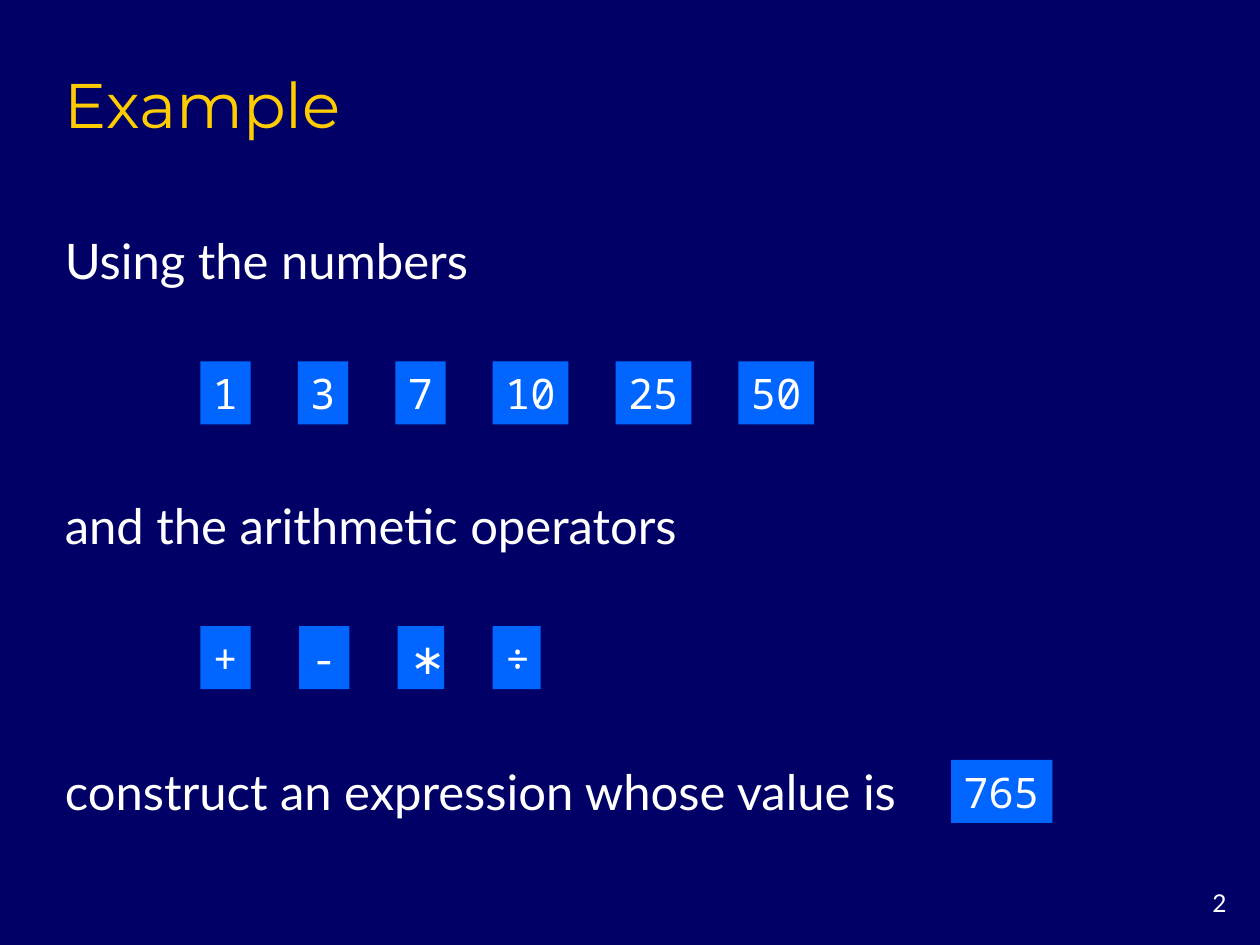
from dataclasses import dataclass

from pptx import Presentation
from pptx import util as u
from pptx.dml.color import RGBColor
from pptx.enum import shapes, text


@dataclass(frozen=True)
class Theme:
    background: RGBColor = RGBColor(0x00, 0x00, 0x66)
    tile: RGBColor = RGBColor(0x00, 0x66, 0xFF)
    title: RGBColor = RGBColor(0xFF, 0xCC, 0x00)
    body: RGBColor = RGBColor(0xFF, 0xFF, 0xFF)
    title_font: str = "Montserrat"
    body_font: str = "Lato"
    tile_font: str = "Noto Sans Mono"
    title_size: float = 36
    body_size: float = 28
    tile_size: float = 24
    number_size: float = 14


@dataclass(frozen=True)
class Box:
    left: float
    top: float
    width: float
    height: float

    def lengths(self) -> tuple:
        return tuple(u.Pt(value) for value in (self.left, self.top, self.width, self.height))


@dataclass(frozen=True)
class Tile:
    label: str
    width: float


@dataclass(frozen=True)
class TileRow:
    top: float
    gap: float
    tiles: tuple[Tile, ...]


@dataclass(frozen=True)
class Statement:
    words: str
    top: float
    width: float = 620


THEME = Theme()
MARGIN = 30
ROW_LEFT = 114.5
TILE_HEIGHT = 36
STATEMENT_HEIGHT = 41

STATEMENTS = (
    Statement("Using the numbers", 128.2),
    Statement("and the arithmetic operators", 279.4),
    Statement("construct an expression whose value is", 431.3, 503.3),
)
NUMBERS = TileRow(206.6, 26.9, (
    Tile("1", 28.8), Tile("3", 28.8), Tile("7", 28.8),
    Tile("10", 43.3), Tile("25", 43.3), Tile("50", 43.3),
))
OPERATORS = TileRow(357.8, 27.6, (
    Tile("+", 28.8), Tile("-", 28.8), Tile("∗", 26.6), Tile("÷", 27.4),
))
TARGET = Tile("765", 58)


def write_text(shape, words: str, *, font: str, size: float,
               color: RGBColor = THEME.body,
               align=text.PP_ALIGN.LEFT,
               anchor=text.MSO_ANCHOR.MIDDLE,
               wrap: bool = True, grow: bool = False) -> None:
    frame = shape.text_frame
    frame.word_wrap = wrap
    frame.vertical_anchor = anchor
    frame.auto_size = (text.MSO_AUTO_SIZE.SHAPE_TO_FIT_TEXT if grow
                       else text.MSO_AUTO_SIZE.NONE)
    paragraph = frame.paragraphs[0]
    paragraph.alignment = align
    run = paragraph.add_run()
    run.text = words
    run.font.name = font
    run.font.size = u.Pt(size)
    run.font.color.rgb = color


def add_text(slide, words: str, box: Box, **text_format) -> None:
    write_text(slide.shapes.add_textbox(*box.lengths()), words, **text_format)


def add_tile(container, tile: Tile, left: float, top: float) -> None:
    box = Box(left, top, tile.width, TILE_HEIGHT)
    shape = container.add_shape(shapes.MSO_SHAPE.RECTANGLE, *box.lengths())
    shape.shadow.inherit = False
    shape.fill.solid()
    shape.fill.fore_color.rgb = THEME.tile
    shape.line.fill.background()
    write_text(shape, tile.label, font=THEME.tile_font, size=THEME.tile_size,
               wrap=False, grow=True)


def add_tile_row(slide, row: TileRow) -> None:
    group = slide.shapes.add_group_shape()
    left = ROW_LEFT
    for tile in row.tiles:
        add_tile(group.shapes, tile, left, row.top)
        left += tile.width + row.gap


def main() -> None:
    presentation = Presentation()
    presentation.slide_width = u.Pt(720)
    presentation.slide_height = u.Pt(540)
    slide = presentation.slides.add_slide(presentation.slide_layouts[6])
    slide.background.fill.solid()
    slide.background.fill.fore_color.rgb = THEME.background

    add_text(slide, "2", Box(660, 504, 48, 24), font=THEME.body_font,
             size=THEME.number_size, align=text.PP_ALIGN.RIGHT,
             anchor=text.MSO_ANCHOR.TOP)
    add_text(slide, "Example", Box(MARGIN, 30, 612, 54), font=THEME.title_font,
             size=THEME.title_size, color=THEME.title,
             anchor=text.MSO_ANCHOR.BOTTOM)
    for statement in STATEMENTS:
        box = Box(MARGIN, statement.top, statement.width, STATEMENT_HEIGHT)
        add_text(slide, statement.words, box, font=THEME.body_font,
                 size=THEME.body_size, grow=True)
    for row in (NUMBERS, OPERATORS):
        add_tile_row(slide, row)
    add_tile(slide.shapes, TARGET, 543.5, 434.2)

    presentation.save("out.pptx")


if __name__ == "__main__":
    main()
